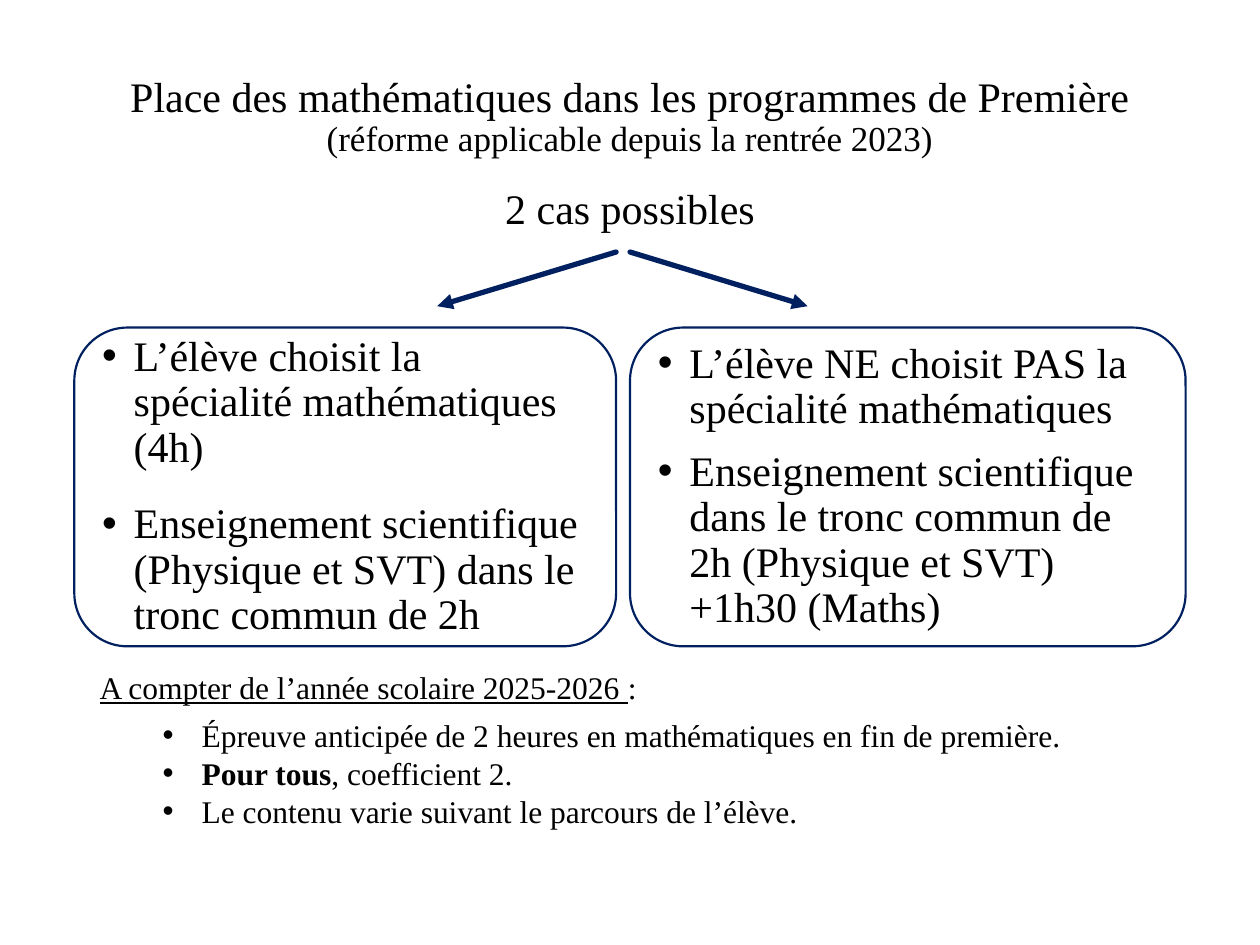
import dataclasses
import typing

import lxml.etree
import pptx
import pptx.dml.color
import pptx.enum.shapes
import pptx.enum.text
import pptx.oxml.ns
import pptx.util

EMU_PER_PX = 9144
FONT = "Times New Roman"
COLOURS = {"text": "000000", "outline": "002060", "panel": "FFFFFF"}


@dataclasses.dataclass(frozen=True)
class Area:
    left: int
    top: int
    width: int
    height: int


@dataclasses.dataclass(frozen=True)
class Choice:
    area: Area
    items: tuple[str, str]
    gap: int


@dataclasses.dataclass(frozen=True)
class Arrow:
    start: tuple[int, int]
    end: tuple[int, int]


ARROWS = (Arrow((500, 200), (641, 243)), Arrow((489, 200), (347, 243)))
CHOICES = (
    Choice(
        Area(59, 260, 430, 253),
        (
            "L’élève choisit la spécialité mathématiques (4h)",
            "Enseignement scientifique (Physique et SVT) dans le tronc commun de 2h",
        ),
        18,
    ),
    Choice(
        Area(500, 260, 441, 253),
        (
            "L’élève NE choisit PAS la spécialité mathématiques",
            "Enseignement scientifique dans le tronc commun de 2h (Physique et SVT) +1h30 (Maths)",
        ),
        10,
    ),
)
EXAM_POINTS = (
    (("Épreuve anticipée de 2 heures en mathématiques en fin de première.", False),),
    (("Pour tous", True), (", coefficient 2.", False)),
    (("Le contenu varie suivant le parcours de l’élève.", False),),
)


def px(length: int) -> pptx.util.Emu:
    return pptx.util.Emu(length * EMU_PER_PX)


def colour(name: str) -> pptx.dml.color.RGBColor:
    return pptx.dml.color.RGBColor.from_string(COLOURS[name])


def add_element(parent: typing.Any, tag: str, **attributes: str) -> typing.Any:
    return lxml.etree.SubElement(parent, pptx.oxml.ns.qn(tag), attributes)


def place(shape: typing.Any, area: Area) -> None:
    shape.left, shape.top = px(area.left), px(area.top)
    shape.width, shape.height = px(area.width), px(area.height)


def set_font(font: typing.Any, size: int) -> None:
    font.name = FONT
    font.size = pptx.util.Pt(size)
    font.color.rgb = colour("text")


def set_bullet(para: typing.Any, margin: int, hanging: int) -> None:
    properties = para._p.get_or_add_pPr()
    properties.set("marL", str(px(margin)))
    properties.set("indent", str(px(-hanging)))
    bullet_colour = add_element(properties, "a:buClr")
    add_element(bullet_colour, "a:srgbClr", val=COLOURS["text"])
    add_element(properties, "a:buFont", typeface="Arial")
    add_element(properties, "a:buChar", char="•")


def fill_title(title: typing.Any) -> None:
    place(title, Area(50, 30, 900, 186))
    frame = title.text_frame
    frame.auto_size = pptx.enum.text.MSO_AUTO_SIZE.NONE
    frame.vertical_anchor = pptx.enum.text.MSO_ANCHOR.MIDDLE
    frame.margin_left = frame.margin_right = frame.margin_top = frame.margin_bottom = 0
    heading = frame.paragraphs[0]
    span = heading.add_run()
    span.text = "Place des mathématiques dans les programmes de Première"
    set_font(span.font, 24)
    heading.add_line_break()
    span = heading.add_run()
    span.text = "(réforme applicable depuis la rentrée 2023)"
    set_font(span.font, 20)
    cases = frame.add_paragraph()
    cases.text = "2 cas possibles"
    cases.space_before = pptx.util.Pt(16.5)
    set_font(cases.font, 24)
    for para in frame.paragraphs:
        para.alignment = pptx.enum.text.PP_ALIGN.CENTER
        para.line_spacing = 0.9


def draw_arrow(page: typing.Any, arrow: Arrow) -> None:
    line = page.shapes.add_connector(
        pptx.enum.shapes.MSO_CONNECTOR.STRAIGHT,
        *map(px, arrow.start + arrow.end),
    )
    line.line.color.rgb = colour("outline")
    line.line.width = pptx.util.Pt(3)
    outline = line.line._get_or_add_ln()
    outline.set("cap", "rnd")
    add_element(outline, "a:tailEnd", type="triangle")
    add_element(line._element.spPr, "a:effectLst")


def draw_choice(page: typing.Any, choice: Choice) -> None:
    area = choice.area
    box = page.shapes.add_shape(
        pptx.enum.shapes.MSO_SHAPE.ROUNDED_RECTANGLE,
        *map(px, (area.left, area.top, area.width, area.height)),
    )
    box.shadow.inherit = False
    box.fill.solid()
    box.fill.fore_color.rgb = colour("panel")
    fill = box._element.spPr.find(".//" + pptx.oxml.ns.qn("a:srgbClr"))
    add_element(fill, "a:alpha", val="50000")
    box.line.color.rgb = colour("outline")
    box.line.width = pptx.util.Pt(1.25)
    frame = box.text_frame
    frame.word_wrap = True
    frame.vertical_anchor = pptx.enum.text.MSO_ANCHOR.MIDDLE
    for index, item in enumerate(choice.items):
        para = frame.add_paragraph() if index else frame.paragraphs[0]
        para.text = item
        para.alignment = pptx.enum.text.PP_ALIGN.LEFT
        set_bullet(para, 25, 25)
        para.line_spacing = 0.9
        para.space_before = pptx.util.Pt(choice.gap if index else 0)
        set_font(para.font, 24)


def fill_body(body: typing.Any) -> None:
    place(body, Area(69, 525, 925, 140))
    frame = body.text_frame
    frame.word_wrap = True
    frame.auto_size = pptx.enum.text.MSO_AUTO_SIZE.SHAPE_TO_FIT_TEXT
    intro = frame.paragraphs[0]
    properties = intro._p.get_or_add_pPr()
    properties.set("marL", "0")
    properties.set("indent", "0")
    add_element(properties, "a:buNone")
    intro.space_after = pptx.util.Pt(6)
    for text, underlined in (("A compter de l’année scolaire 2025-2026 ", True), (":", False)):
        span = intro.add_run()
        span.text = text
        span.font.underline = underlined
    for point in EXAM_POINTS:
        para = frame.add_paragraph()
        para.level = 1
        set_bullet(para, 81, 31)
        for text, bold in point:
            span = para.add_run()
            span.text = text
            span.font.bold = bold
    for para in frame.paragraphs:
        para.space_before = pptx.util.Pt(0)
        set_font(para.font, 18)


def main() -> None:
    deck = pptx.Presentation()
    deck.slide_width, deck.slide_height = px(1000), px(750)
    page = deck.slides.add_slide(deck.slide_layouts[1])
    fill_title(page.shapes.title)
    for arrow in ARROWS:
        draw_arrow(page, arrow)
    for choice in CHOICES:
        draw_choice(page, choice)
    fill_body(page.placeholders[1])
    deck.save("out.pptx")


if __name__ == "__main__":
    main()
